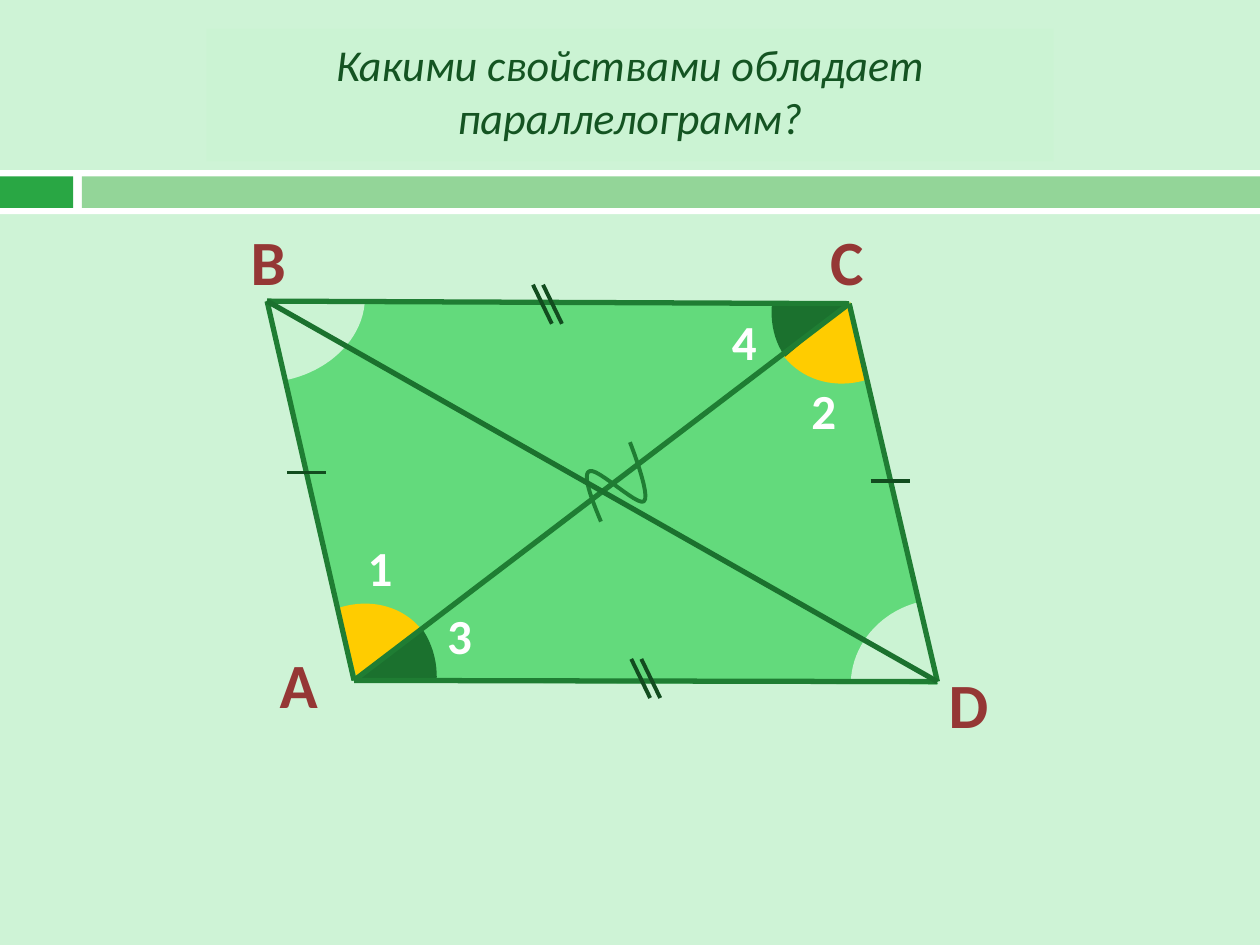
from lxml.etree import SubElement
from pptx import Presentation
from pptx.dml.color import RGBColor
from pptx.enum.shapes import MSO_CONNECTOR, MSO_SHAPE
from pptx.enum.text import MSO_ANCHOR, PP_ALIGN
from pptx.oxml.ns import qn
from pptx.util import Inches, Pt

WIDTH, HEIGHT = 10, 7.5
FONT = "Calibri"
BACKGROUND, PALE, GREEN = "CEF3D6", "CBF3D3", "63DA7C"
YELLOW, DARK, EDGE, TICK = "FFCC00", "1B712E", "1F7D33", "124C1F"
LETTER, WHITE = "953735", "FFFFFF"

TITLE = "Какими свойствами обладает параллелограмм?"
TITLE_BOX = (1.46, 0.23, 6.72 + 0.18, 1.05)
TITLE_BOX = (1.64, 0.23, 6.72, 1.05)

BANDS = [  # box, fill
    ((0, 1.35, WIDTH, 0.35), WHITE),
    ((0, 1.4, 0.58, 0.25), "29A744"),
    ((0.65, 1.4, WIDTH - 0.65, 0.25), "93D598"),
]
VERTICES = {"A": (2.81, 5.4), "B": (2.12, 2.39), "C": (6.74, 2.41), "D": (7.44, 5.41)}
SEGMENTS = [("A", "C", EDGE), ("C", "D", EDGE), ("A", "D", EDGE),
            ("B", "C", EDGE), ("B", "A", EDGE), ("B", "D", DARK)]
HALVES = [  # box, rotation
    ((1.46, 1.38, 4.94, 2.81), 322.8),
    ((3.17, 3.63, 4.93, 2.8), 142.8),
]
ANGLES = [  # box, rotation, start and end in degrees, fill, outline
    ((2.25, 4.75, 1.17, 1.3), 53.3, 202.25, 269.6, YELLOW, None),
    ((6.14, 1.72, 1.22, 1.36), 226.8, 209.63, 275.93, YELLOW, None),
    ((2.12, 4.74, 1.37, 1.31), 116.6, 206.9, 243.66, DARK, None),
    ((6.07, 1.84, 1.3, 1.16), 297.8, 202.07, 243.09, DARK, None),
    ((6.76, 4.77, 1.38, 1.28), 345.7, 194.78, 268.44, PALE, PALE),
    ((1.39, 1.81, 1.5, 1.21), 168.7, 190.85, 267.62, PALE, PALE),
]
LETTERS = [  # the first three are Cyrillic
    ("А", (2.12, 5.07, 0.51, 0.71)), ("В", (1.89, 1.72, 0.48, 0.71)),
    ("С", (6.49, 1.72, 0.47, 0.71)), ("D", (7.43, 5.23, 0.52, 0.71)),
]
NUMBERS = [
    ("1", (2.82, 4.22, 0.39, 0.57)), ("2", (6.34, 2.97, 0.39, 0.57)),
    ("3", (3.45, 4.76, 0.39, 0.57)), ("4", (5.71, 2.42, 0.31, 0.57)),
]
SINGLE_TICKS = [(6.91, 3.82), (2.28, 3.75)]
DOUBLE_TICKS = [(4.23, 2.26), (5.01, 5.23)]
TICK_LENGTH, TICK_GAP, TICK_SLANT = 0.31, 0.08, 0.15
WAVE = [  # cubic curves: start, two control points, end
    ((4.77, 4.14), (4.69, 3.95), (4.62, 3.76), (4.68, 3.74)),
    ((4.68, 3.74), (4.74, 3.71), (5.06, 4.02), (5.11, 3.98)),
    ((5.11, 3.98), (5.17, 3.94), (5, 3.51), (5, 3.51)),
]
WAVE_STEPS = 12


def color(value):
    return RGBColor.from_string(value)


def inches(values):
    return [Inches(value) for value in values]


def add_shape(slide, kind, box, fill, outline=None, rotation=0):
    shape = slide.shapes.add_shape(kind, *inches(box))
    shape.shadow.inherit = False
    shape.rotation = rotation
    shape.fill.solid()
    shape.fill.fore_color.rgb = color(fill)
    if outline:
        shape.line.color.rgb = color(outline)
        shape.line.width = Pt(1.5)
    else:
        shape.line.fill.background()
    return shape


def add_line(shapes, start, end, line_color, width):
    line = shapes.add_connector(MSO_CONNECTOR.STRAIGHT, *inches(start + end))
    line.line.color.rgb = color(line_color)
    line.line.width = Pt(width)
    SubElement(line._element.spPr, qn("a:effectLst"))


def add_run(paragraph, text, size, text_color, bold=False, italic=False):
    run = paragraph.add_run()
    run.text = text
    font = run.font
    font.name, font.size = FONT, Pt(size)
    font.bold, font.italic = bold, italic
    font.color.rgb = color(text_color)


def add_label(slide, text, box, size, text_color, wrap):
    frame = slide.shapes.add_textbox(*inches(box)).text_frame
    frame.word_wrap = wrap
    add_run(frame.paragraphs[0], text, size, text_color, bold=True)


def add_title(slide):
    frame = add_shape(slide, MSO_SHAPE.RECTANGLE, TITLE_BOX, PALE).text_frame
    frame.word_wrap = True
    frame.vertical_anchor = MSO_ANCHOR.TOP
    frame.margin_top = Inches(0.07)
    paragraph = frame.paragraphs[0]
    paragraph.alignment = PP_ALIGN.CENTER
    add_run(paragraph, TITLE, 25.2, "145422", italic=True)


def curve_point(curve, t):
    weights = ((1 - t) ** 3, 3 * t * (1 - t) ** 2, 3 * t ** 2 * (1 - t), t ** 3)
    return inches(sum(w * point[axis] for w, point in zip(weights, curve))
                  for axis in (0, 1))


def add_wave(slide):
    points = [curve_point(curve, step / WAVE_STEPS)
              for curve in WAVE for step in range(1, WAVE_STEPS + 1)]
    builder = slide.shapes.build_freeform(*inches(WAVE[0][0]))
    builder.add_line_segments(points, close=False)
    wave = builder.convert_to_shape()
    wave.shadow.inherit = False
    wave.fill.background()
    wave.line.color.rgb = color(EDGE)
    wave.line.width = Pt(2.25)


def add_ticks(slide):
    for x, y in SINGLE_TICKS:
        add_line(slide.shapes, (x, y), (x + TICK_LENGTH, y), TICK, 2.25)
    for left, top in DOUBLE_TICKS:
        group = slide.shapes.add_group_shape()
        for x in (left + TICK_GAP, left):
            add_line(group.shapes, (x, top), (x + TICK_SLANT, top + TICK_LENGTH),
                     TICK, 2.25)


def main():
    presentation = Presentation()
    presentation.slide_width, presentation.slide_height = inches((WIDTH, HEIGHT))
    slide = presentation.slides.add_slide(presentation.slide_layouts[6])
    slide.background.fill.solid()
    slide.background.fill.fore_color.rgb = color(BACKGROUND)

    for box, fill in BANDS:
        add_shape(slide, MSO_SHAPE.RECTANGLE, box, fill)
    for box, rotation in HALVES:
        half = add_shape(slide, MSO_SHAPE.ISOSCELES_TRIANGLE, box, GREEN, GREEN, rotation)
        half.adjustments[0] = 0.257
    for box, rotation, start, end, fill, outline in ANGLES:
        pie = add_shape(slide, MSO_SHAPE.PIE, box, fill, outline, rotation)
        for index, degrees in enumerate((start, end)):
            pie.adjustments[index] = degrees * 0.6  # 60000 units a degree, over 100000
    add_wave(slide)
    for start, end, line_color in SEGMENTS:
        add_line(slide.shapes, VERTICES[start], VERTICES[end], line_color, 3)
    for text, box in LETTERS:
        add_label(slide, text, box, 36, LETTER, wrap=False)
    for text, box in NUMBERS:
        add_label(slide, text, box, 28, WHITE, wrap=True)
    add_title(slide)
    add_ticks(slide)
    presentation.save("out.pptx")


if __name__ == "__main__":
    main()
